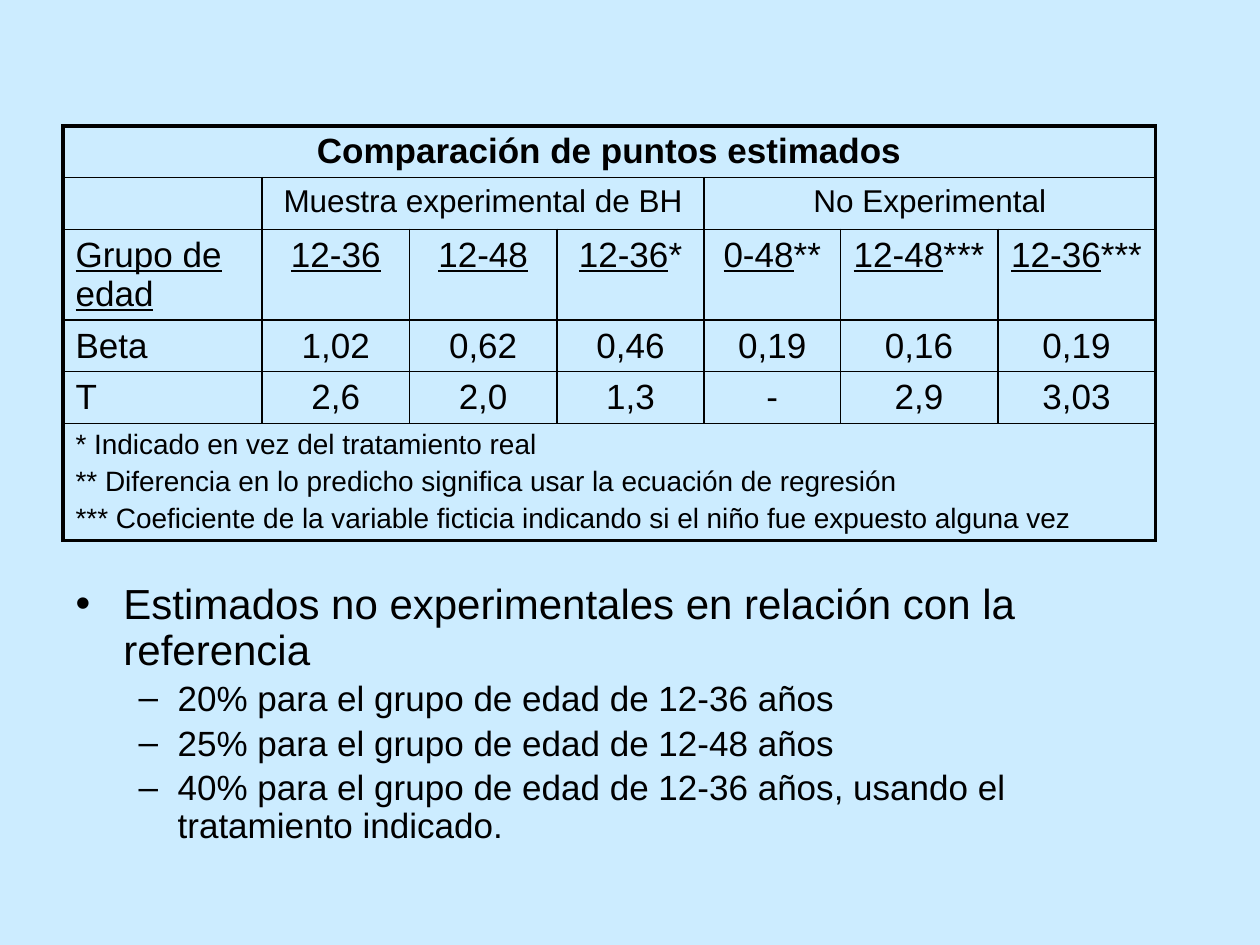
from lxml import etree
from pptx import Presentation
from pptx.dml.color import RGBColor
from pptx.enum.text import MSO_AUTO_SIZE, PP_ALIGN
from pptx.oxml.ns import qn
from pptx.util import Inches, Pt

CENTER, LEFT = PP_ALIGN.CENTER, PP_ALIGN.LEFT
NO_AUTOFIT = MSO_AUTO_SIZE.NONE

FONT = "Arial"
BACKGROUND, BLACK = "CCECFF", "000000"
OUTER_LINE, INNER_LINE = 2.25, 1

COLUMN_WIDTHS = [1.58, 1.17, 1.17, 1.17, 1.08, 1.25, 1.25]
ROW_HEIGHTS = [0.4, 0.41, 0.72, 0.41, 0.41, 0.93]
TABLE_TITLE = "Comparación de puntos estimados"
AGE_GROUPS = ["Grupo de edad", "12-36", "12-48", "12-36*", "0-48**", "12-48***", "12-36***"]
ESTIMATES = [
    ["Beta", "1,02", "0,62", "0,46", "0,19", "0,16", "0,19"],
    ["T", "2,6", "2,0", "1,3", "-", "2,9", "3,03"],
]
FOOTNOTES = [
    "* Indicado en vez del tratamiento real",
    "** Diferencia en lo predicho significa usar la ecuación de regresión",
    "*** Coeficiente de la variable ficticia indicando si el niño fue expuesto alguna vez",
]
CONCLUSIONS = [
    (0, "Estimados no experimentales en relación con la referencia"),
    (1, "20% para el grupo de edad de 12-36 años"),
    (1, "25% para el grupo de edad de 12-48 años"),
    (1, "40% para el grupo de edad de 12-36 años, usando el tratamiento indicado."),
]
# Text size, left margin, hanging indent and bullet of each list level
LIST_LEVELS = [(24, 0.38, -0.38, "•"), (20, 0.81, -0.31, "–")]


def color(hex_value):
    return RGBColor.from_string(hex_value)


def format_paragraph(paragraph, size, bold=False):
    paragraph.space_before = Pt(0.2 * size)
    for run in paragraph.runs:
        run.font.name = FONT
        run.font.size = Pt(size)
        run.font.bold = bold
        run.font.color.rgb = color(BLACK)


def write_cell(cell, text, size, alignment=CENTER, bold=False):
    cell.text_frame.text = text
    for paragraph in cell.text_frame.paragraphs:
        paragraph.alignment = alignment
        format_paragraph(paragraph, size, bold)


def write_age_group(cell, text, alignment):
    """Underline the age range but not the asterisks after it."""
    age_range = text.rstrip("*")
    write_cell(cell, age_range, 20, alignment)
    paragraph = cell.text_frame.paragraphs[0]
    paragraph.runs[0].font.underline = True
    if age_range != text:
        paragraph.add_run().text = text[len(age_range):]
        format_paragraph(paragraph, 20)


def add_border(cell, side, width):
    line = etree.SubElement(cell._tc.get_or_add_tcPr(), qn(f"a:ln{side}"), w=str(Pt(width)))
    fill = etree.SubElement(line, qn("a:solidFill"))
    etree.SubElement(fill, qn("a:srgbClr"), val=BLACK)


def style_cells(table):
    """Thick frame around the table, thin lines inside it."""
    last_row, last_column = len(ROW_HEIGHTS) - 1, len(COLUMN_WIDTHS) - 1
    for row in range(last_row + 1):
        for column in range(last_column + 1):
            cell = table.cell(row, column)
            right_column = column + cell.span_width - 1 if cell.is_merge_origin else column
            outer_sides = {
                "L": column == 0,
                "R": right_column == last_column,
                "T": row == 0,
                "B": row == last_row,
            }
            for side, is_outer in outer_sides.items():
                add_border(cell, side, OUTER_LINE if is_outer else INNER_LINE)
            cell.fill.solid()
            cell.fill.fore_color.rgb = color(BACKGROUND)


def add_estimates_table(slide):
    frame = slide.shapes.add_table(
        len(ROW_HEIGHTS), len(COLUMN_WIDTHS), Inches(0.5), Inches(1),
        Inches(sum(COLUMN_WIDTHS)), Inches(sum(ROW_HEIGHTS)))
    table = frame.table
    table.first_row = table.horz_banding = False
    for column, width in zip(table.columns, COLUMN_WIDTHS):
        column.width = Inches(width)
    for row, height in zip(table.rows, ROW_HEIGHTS):
        row.height = Inches(height)

    for row, first, last in [(0, 0, 6), (1, 1, 3), (1, 4, 6), (5, 0, 6)]:
        table.cell(row, first).merge(table.cell(row, last))
    style_cells(table)

    write_cell(table.cell(0, 0), TABLE_TITLE, 20, bold=True)
    write_cell(table.cell(1, 1), "Muestra experimental de BH", 18)
    write_cell(table.cell(1, 4), "No Experimental", 18)
    for column, age_group in enumerate(AGE_GROUPS):
        alignment = CENTER if column else LEFT
        write_age_group(table.cell(2, column), age_group, alignment)
        for row, values in enumerate(ESTIMATES, start=3):
            write_cell(table.cell(row, column), values[column], 20, alignment)
    write_cell(table.cell(5, 0), "\n".join(FOOTNOTES), 16, LEFT)


def fill_conclusions(body):
    body.left, body.top = Inches(0.5), Inches(4.58)
    body.width, body.height = Inches(9), Inches(2.12)
    text_frame = body.text_frame
    text_frame.text = "\n".join(text for _, text in CONCLUSIONS)
    text_frame.auto_size = NO_AUTOFIT
    for paragraph, (level, _) in zip(text_frame.paragraphs, CONCLUSIONS):
        size, margin, indent, bullet = LIST_LEVELS[level]
        paragraph.level = level
        paragraph.line_spacing = 0.9
        format_paragraph(paragraph, size)
        properties = paragraph._p.get_or_add_pPr()
        properties.set("marL", str(Inches(margin)))
        properties.set("indent", str(Inches(indent)))
        etree.SubElement(properties, qn("a:buChar"), char=bullet)


def main():
    presentation = Presentation()
    presentation.slide_width, presentation.slide_height = Inches(10), Inches(7.5)
    slide = presentation.slides.add_slide(presentation.slide_layouts[1])
    slide.background.fill.solid()
    slide.background.fill.fore_color.rgb = color(BACKGROUND)
    title = slide.shapes.title
    title.element.getparent().remove(title.element)
    fill_conclusions(slide.placeholders[1])
    add_estimates_table(slide)
    presentation.save("out.pptx")


if __name__ == "__main__":
    main()
